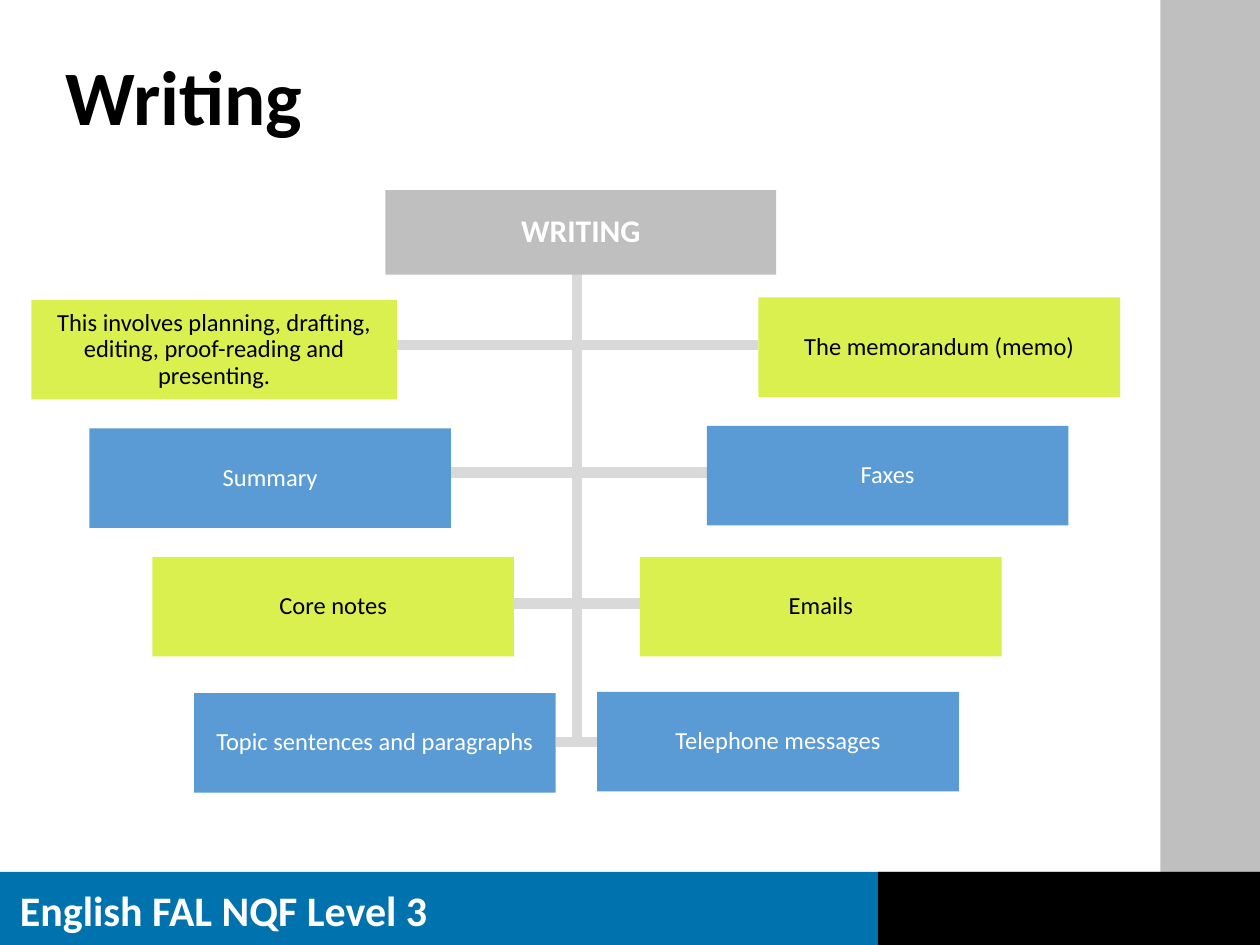
from lxml import etree
from pptx import Presentation
from pptx.dml.color import RGBColor
from pptx.enum.shapes import MSO_CONNECTOR, MSO_SHAPE
from pptx.enum.text import MSO_ANCHOR, PP_ALIGN
from pptx.oxml.ns import qn
from pptx.util import Inches, Pt

COLORS = {
    "grey": "BFBFBF",
    "branch": "D9D9D9",
    "lime": "DAF04F",
    "sky": "5B9BD5",
    "footer": "0072AE",
    "black": "000000",
    "white": "FFFFFF",
}
FONT = "Calibri"
TRUNK_X, TRUNK_TOP = 4.58, 2.07
BOX_WIDTH, BOX_HEIGHT = 2.87, 0.79

# Fill, text colour, branch height, then (text, left, top, width) of both boxes
ROWS = [
    ("lime", "black", 2.74,
     ("This involves planning, drafting, editing, proof-reading and presenting.", 0.25, 2.38, 2.9),
     ("The memorandum (memo)", 6.02, 2.36, BOX_WIDTH)),
    ("sky", "white", 3.75,
     ("Summary", 0.71, 3.4, BOX_WIDTH), ("Faxes", 5.61, 3.38, BOX_WIDTH)),
    ("lime", "black", 4.79,
     ("Core notes", 1.21, 4.42, BOX_WIDTH), ("Emails", 5.08, 4.42, BOX_WIDTH)),
    ("sky", "white", 5.89,
     ("Topic sentences and paragraphs", 1.54, 5.5, BOX_WIDTH),
     ("Telephone messages", 4.74, 5.49, BOX_WIDTH)),
]


def rgb(name):
    return RGBColor.from_string(COLORS[name])


def format_text(text_frame, size, color, bold=False):
    font = text_frame.paragraphs[0].runs[0].font
    font.name = FONT
    font.size = Pt(size)
    font.bold = bold
    font.color.rgb = rgb(color)


def add_panel(slide, left, top, width, height, fill):
    shape = slide.shapes.add_shape(
        MSO_SHAPE.RECTANGLE, Inches(left), Inches(top), Inches(width), Inches(height))
    shape.shadow.inherit = False
    shape.fill.solid()
    shape.fill.fore_color.rgb = rgb(fill)
    shape.line.fill.background()
    return shape


def add_topic(slide, text, left, top, width, height, fill, color, size=14, bold=False):
    """Add a filled box with centred text."""
    text_frame = add_panel(slide, left, top, width, height, fill).text_frame
    text_frame.word_wrap = True
    text_frame.vertical_anchor = MSO_ANCHOR.MIDDLE
    text_frame.margin_left = text_frame.margin_right = Inches(0.01)
    text_frame.margin_top = text_frame.margin_bottom = Inches(0.01)
    text_frame.text = text
    paragraph = text_frame.paragraphs[0]
    paragraph.alignment = PP_ALIGN.CENTER
    paragraph.line_spacing = 0.9
    format_text(text_frame, size, color, bold)


def add_branch(slide, x1, y1, x2, y2):
    line = slide.shapes.add_connector(
        MSO_CONNECTOR.STRAIGHT, Inches(x1), Inches(y1), Inches(x2), Inches(y2))
    line.line.color.rgb = rgb("branch")
    line.line.width = Pt(6)
    etree.SubElement(line._element.spPr, qn("a:effectLst"))


def add_frame(slide):
    """Add the side band and the footer."""
    add_panel(slide, 9.21, 0, 0.79, 7.5, "grey")
    add_panel(slide, 0, 6.92, 10, 0.58, "footer")
    add_panel(slide, 6.97, 6.92, 3.03, 0.58, "black")
    text_box = slide.shapes.add_textbox(Inches(0.06), Inches(6.97), Inches(3.75), Inches(0.5))
    text_box.text_frame.text = "English FAL NQF Level 3"
    format_text(text_box.text_frame, 24, "white", bold=True)


def set_title(slide, text):
    title = slide.shapes.title
    title.left, title.top = Inches(0.42), Inches(0.4)
    title.width, title.height = Inches(8.65), Inches(0.79)
    text_frame = title.text_frame
    text_frame.text = text
    text_frame.vertical_anchor = MSO_ANCHOR.MIDDLE
    text_frame.paragraphs[0].alignment = PP_ALIGN.LEFT
    text_frame.paragraphs[0].line_spacing = 0.9
    format_text(text_frame, 44, "black", bold=True)


def add_tree(slide):
    for _, _, branch_y, (_, left, _, width), (_, right, _, _) in ROWS:
        add_branch(slide, left + width, branch_y, right, branch_y)
    add_branch(slide, TRUNK_X, TRUNK_TOP, TRUNK_X, ROWS[-1][2])
    add_topic(slide, "WRITING", 3.06, 1.51, 3.1, 0.67, "grey", "white", size=18, bold=True)
    for fill, color, _, *topics in ROWS:
        for text, left, top, width in topics:
            add_topic(slide, text, left, top, width, BOX_HEIGHT, fill, color)


def main():
    presentation = Presentation()
    presentation.slide_width, presentation.slide_height = Inches(10), Inches(7.5)
    slide = presentation.slides.add_slide(presentation.slide_layouts[5])
    add_frame(slide)
    set_title(slide, "Writing")
    add_tree(slide)
    presentation.save("out.pptx")


if __name__ == "__main__":
    main()
